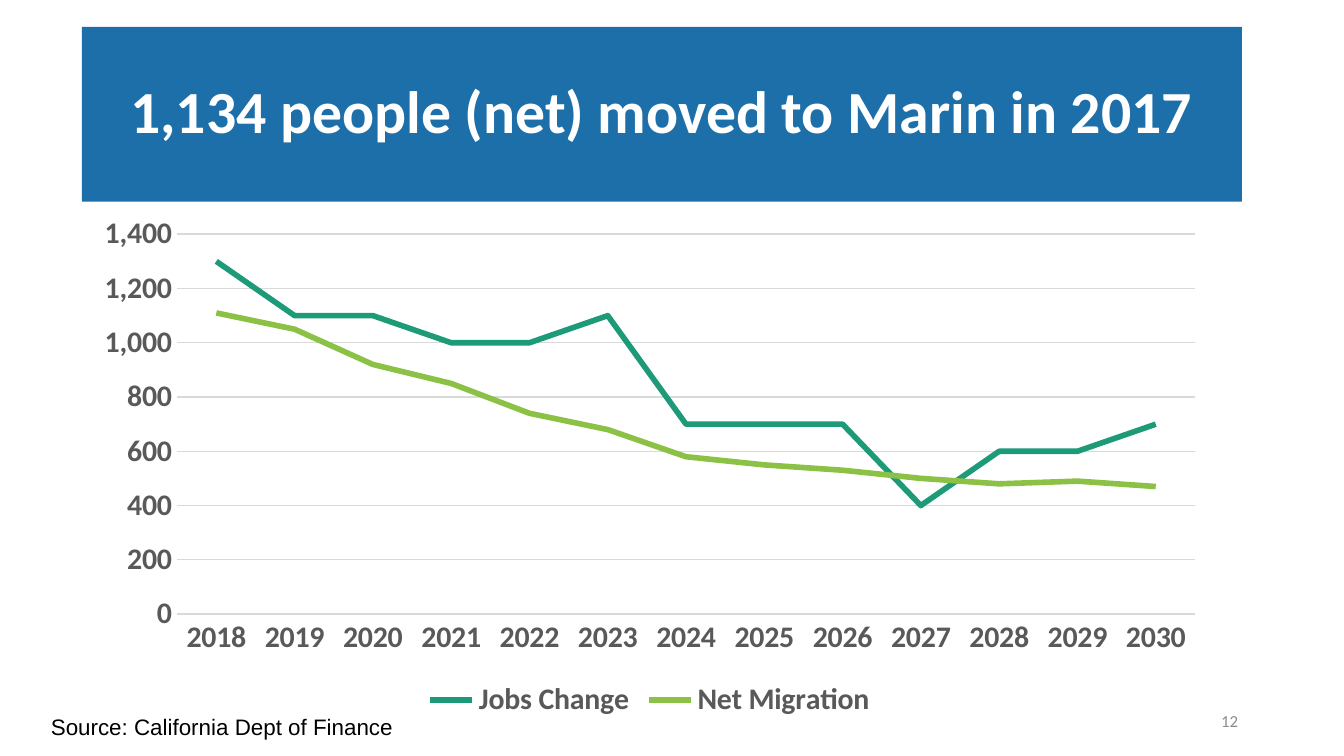
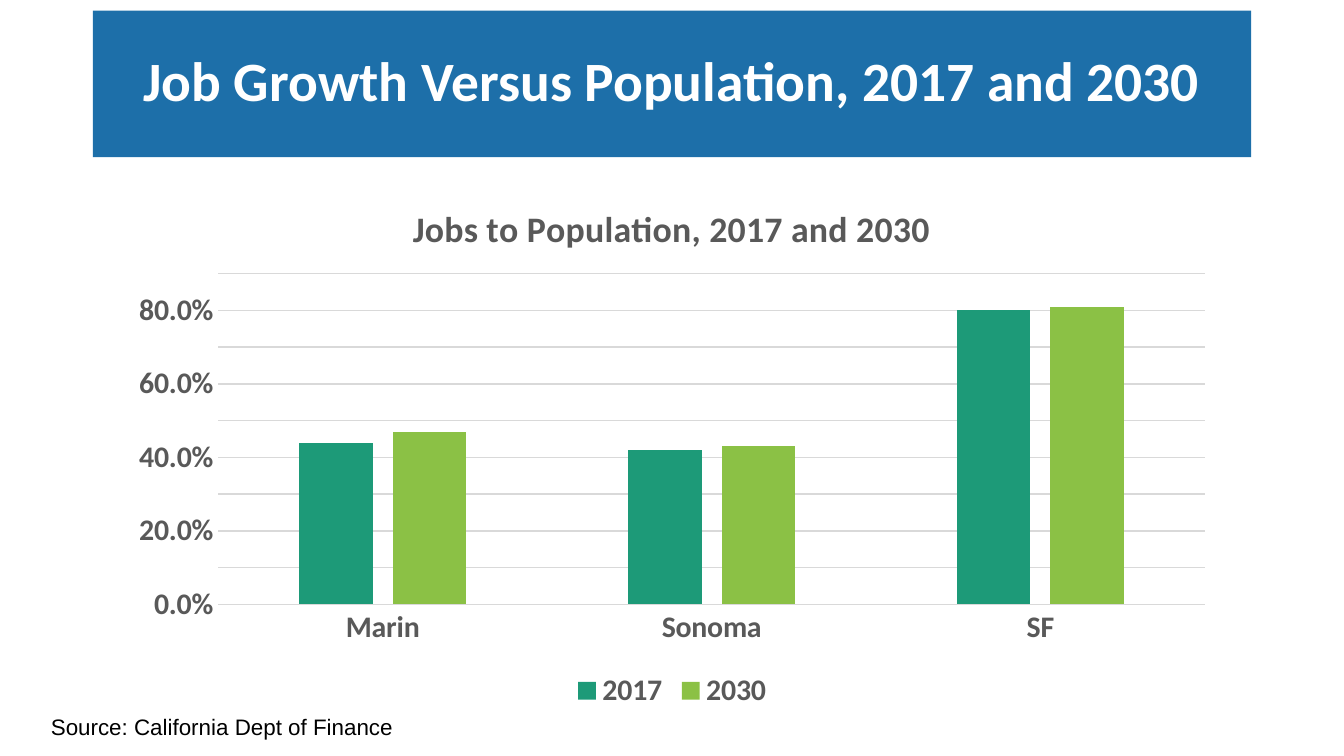
from pptx import Presentation, util as u
from pptx.chart.data import CategoryChartData
from pptx.dml.color import RGBColor
from pptx.enum import chart as ch, text

WIDTH, HEIGHT = 10, 5.625
COLORS = {"band": "1D6FA9", "title": "FFFFFF", "label": "595959", "grid": "D9D9D9",
          "number": "8C8C8C", "source": "000000", "series": ["1D9A78", "8BC145"]}
SOURCE = "Source: California Dept of Finance"
SLIDES = [
    {"title": "1,134 people (net) moved to Marin in 2017", "title_size": 32,
     "band": (0.61, 0.2, 8.63, 1.3), "plot": (0.61, 1.53, 8.45, 3.86),
     "kind": ch.XL_CHART_TYPE.LINE, "categories": [str(y) for y in range(2018, 2031)],
     "series": {
         "Jobs Change": [1300, 1100, 1100, 1000, 1000, 1100, 700, 700, 700, 400, 600, 600, 700],
         "Net Migration": [1110, 1050, 920, 850, 740, 680, 580, 550, 530, 500, 480, 490, 470]},
     "format": "#,##0", "scale": {"minimum_scale": 0, "maximum_scale": 1400, "major_unit": 200},
     "number": "12"},
    {"title": "Job Growth Versus Population, 2017 and 2030", "title_size": 29.7,
     "band": (0.69, 0.08, 8.62, 1.09), "plot": (0.87, 1.33, 8.26, 3.99),
     "kind": ch.XL_CHART_TYPE.COLUMN_CLUSTERED, "categories": ["Marin", "Sonoma", "SF"],
     "series": {"2017": [0.44, 0.42, 0.8], "2030": [0.47, 0.43, 0.81]},
     "format": "0.0%", "scale": {"minimum_scale": 0, "maximum_scale": 0.9, "major_unit": 0.1},
     "heading": "Jobs to Population, 2017 and 2030",
     "bars": {"gap_width": 219, "overlap": -27}},
]


def rgb(value):
    return RGBColor.from_string(value)


def apply(target, values):
    for name, value in values.items():
        setattr(target, name, value)


def style(font, size, color, bold=False, name="Calibri"):
    apply(font, {"size": u.Pt(size), "bold": bold, "name": name})
    font.color.rgb = rgb(color)


def inches(box):
    return [u.Inches(v) for v in box]


def paint_line(line, color, width):
    line.color.rgb = rgb(color)
    line.width = u.Pt(width)


def add_title(slide, content):
    band = slide.shapes.title
    apply(band, dict(zip(("left", "top", "width", "height"), inches(content["band"]))))
    band.fill.solid()
    band.fill.fore_color.rgb = rgb(COLORS["band"])
    frame = band.text_frame
    frame.text = content["title"]
    apply(frame, {"vertical_anchor": text.MSO_ANCHOR.MIDDLE, "word_wrap": True,
                  "auto_size": text.MSO_AUTO_SIZE.NONE})
    line = frame.paragraphs[0]
    apply(line, {"alignment": text.PP_ALIGN.CENTER, "line_spacing": 0.9})
    style(line.runs[0].font, content["title_size"], COLORS["title"], True)


def add_note(slide, words, box, align, anchor, **font):
    frame = slide.shapes.add_textbox(*inches(box)).text_frame
    apply(frame, {"word_wrap": True, "vertical_anchor": anchor, "text": words})
    frame.paragraphs[0].alignment = align
    style(frame.paragraphs[0].runs[0].font, **font)


def add_plot(slide, content):
    data = CategoryChartData(number_format=content["format"])
    data.categories = content["categories"]
    for name, values in content["series"].items():
        data.add_series(name, values)
    chart = slide.shapes.add_chart(content["kind"], *inches(content["plot"]), data).chart
    style(chart.font, 16, COLORS["label"], True)

    chart.has_title = "heading" in content
    if chart.has_title:
        heading = chart.chart_title.text_frame
        heading.text = content["heading"]
        style(heading.paragraphs[0].runs[0].font, 19.2, COLORS["label"], True)

    chart.has_legend = True
    apply(chart.legend, {"position": ch.XL_LEGEND_POSITION.BOTTOM, "include_in_layout": False})
    style(chart.legend.font, 16, COLORS["label"], True)

    years, amounts = chart.category_axis, chart.value_axis
    for axis in (years, amounts):
        apply(axis, {"major_tick_mark": ch.XL_TICK_MARK.NONE,
                     "minor_tick_mark": ch.XL_TICK_MARK.NONE})
        style(axis.tick_labels.font, 16, COLORS["label"], True)
    paint_line(years.format.line, COLORS["grid"], 0.75)
    amounts.format.line.fill.background()
    amounts.has_major_gridlines = True
    paint_line(amounts.major_gridlines.format.line, COLORS["grid"], 0.75)
    apply(amounts, content["scale"])
    apply(amounts.tick_labels, {"number_format": content["format"],
                                "number_format_is_linked": False})

    plot = chart.plots[0]
    plot.vary_by_categories = False
    apply(plot, content.get("bars", {}))
    for series, color in zip(plot.series, COLORS["series"]):
        if content["kind"] == ch.XL_CHART_TYPE.LINE:
            series.smooth = False
            series.marker.style = ch.XL_MARKER_STYLE.NONE
            paint_line(series.format.line, color, 3)
        else:
            series.format.fill.solid()
            series.format.fill.fore_color.rgb = rgb(color)


def main():
    deck = Presentation()
    apply(deck, {"slide_width": u.Inches(WIDTH), "slide_height": u.Inches(HEIGHT)})
    for content in SLIDES:
        slide = deck.slides.add_slide(deck.slide_layouts[5])
        add_title(slide, content)
        add_plot(slide, content)
        if "number" in content:
            add_note(slide, content["number"], (7.06, 5.21, 2.25, 0.3), text.PP_ALIGN.RIGHT,
                     text.MSO_ANCHOR.MIDDLE, size=9, color=COLORS["number"])
        add_note(slide, SOURCE, (0.28, 5.26, 4.29, 0.3), text.PP_ALIGN.LEFT,
                 text.MSO_ANCHOR.TOP, size=12, color=COLORS["source"], name="Arial")
    deck.save("out.pptx")


if __name__ == "__main__":
    main()
